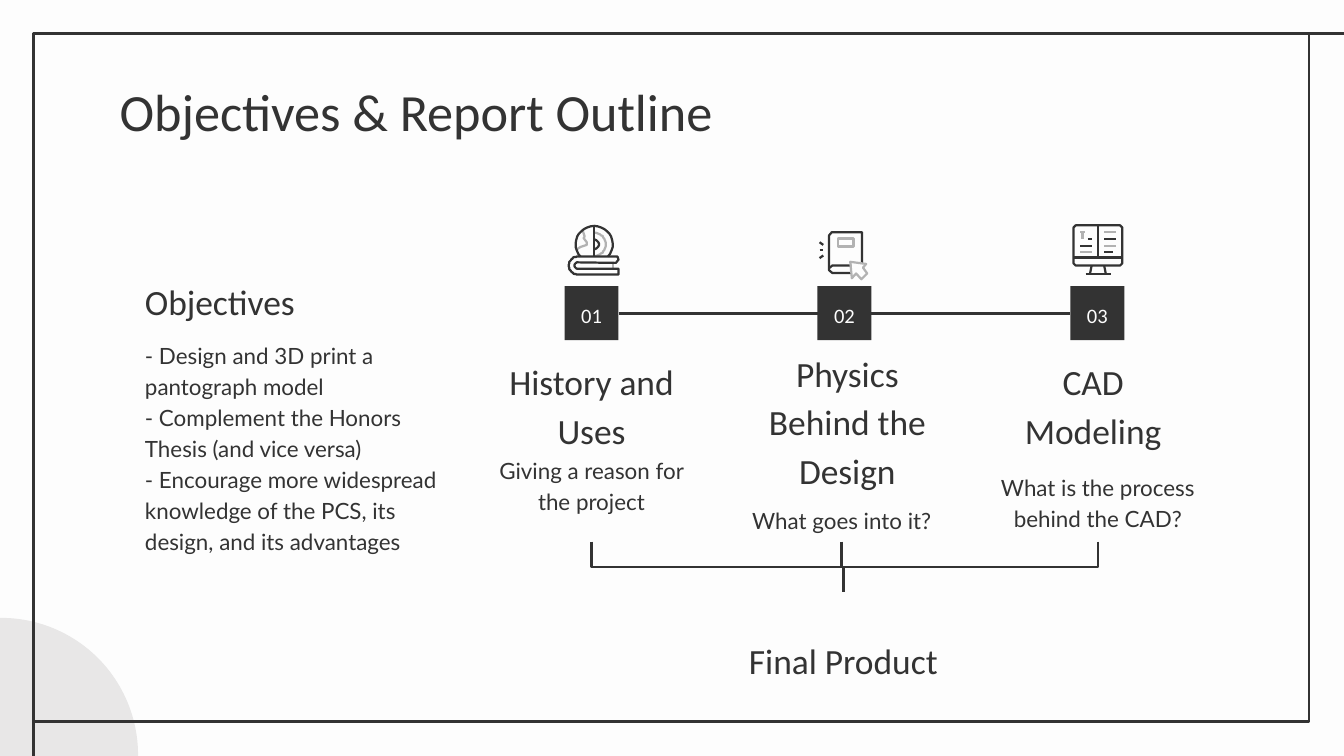
from dataclasses import dataclass
from math import cos, radians, sin

from lxml import etree
from pptx import Presentation
from pptx import util as u
from pptx.dml import color
from pptx.enum import shapes, text
from pptx.oxml import ns


@dataclass(frozen=True)
class Theme:
    """Colours, fonts, type sizes and line widths of the slide."""
    ink: str = "333333"
    paper: str = "FDFDFD"
    grey: str = "B2B2B2"
    pale: str = "E8E7E7"
    head: str = "Calibri"
    body: str = "Lato"
    title_pt: float = 28
    head_pt: float = 19
    body_pt: float = 12
    label_pt: float = 11
    line_pt: float = 1.5
    icon_pt: float = 1.2


T = Theme()
LEFT, CENTER = text.PP_ALIGN.LEFT, text.PP_ALIGN.CENTER
TOP, MIDDLE, BOTTOM = (text.MSO_ANCHOR.TOP, text.MSO_ANCHOR.MIDDLE,
                       text.MSO_ANCHOR.BOTTOM)
HEADING = dict(font=T.head, size=T.head_pt, anchor=BOTTOM)
CAPTION = dict(font=T.body, size=T.body_pt, anchor=TOP)

STEP_LEFT, STEP_TOP, STEP_SIZE, STEP_PITCH = 10.67, 5.41, 1.02, 4.78
STEPS = [
    ("01", "History and Uses", (9.02, 6.86, 4.32, 1.93),
     "Giving a reason for the project", (9.02, 8.31, 4.32, 1.93)),
    ("02", "Physics Behind the Design", (13.79, 6.86, 4.45, 2.69),
     "What goes into it?", (13.79, 9.27, 4.24, 0.97)),
    ("03", "CAD Modeling", (18.59, 6.86, 4.14, 1.93),
     "What is the process behind the CAD?", (18.59, 8.64, 4.32, 1.6)),
]
OBJECTIVES = [
    "- Design and 3D print a pantograph model",
    "- Complement the Honors Thesis (and vice versa)",
    "- Encourage more widespread knowledge of the PCS, its design, "
    "and its advantages",
]


def arc(cx, cy, r, start, end):
    """Return points along an arc, with angles in degrees clockwise from the right."""
    angles = [radians(start + (end - start) * i / 24) for i in range(25)]
    return [(round(cx + r * cos(a)), round(cy + r * sin(a))) for a in angles]


def box(x1, y1, x2, y2):
    """Return the closed outline of a rectangle."""
    return [(x1, y1), (x2, y1), (x2, y2), (x1, y2), (x1, y1)]


def bar(x1, x2, y):
    """Return a horizontal stroke."""
    return [(x1, y), (x2, y)]


GLOBE_ON_BOOK = {
    T.grey: [
        [(34, 11), (38, 23), (36, 26), (42, 34), (42, 39), (30, 43), (22, 48)],
        arc(56, 38, 22, -90, 90), [(92, 73), (92, 83)]],
    T.ink: [
        arc(56, 38, 35, 139, 401), arc(56, 38, 9, -90, 90), [(56, 3), (56, 61)],
        [(100, 61), *arc(25, 78, 17, 270, 90), (102, 95), (102, 84),
         *arc(25, 78, 6, 90, 270), (97, 73), (102, 67), (100, 61)]],
}
CLICKED_BOOK = {
    T.ink: [
        [(62, 79), (26, 79), (20, 74), (20, 8), (25, 2), (82, 2), (82, 60)],
        [(20, 70), (26, 65), (62, 65)],
        bar(2, 9, 36), [(2, 21), (9, 26)], [(2, 51), (9, 46)]],
    T.grey: [
        box(37, 14, 66, 29),
        [(60, 58), (90, 62), (84, 69), (92, 80), (81, 91), (71, 80), (63, 89),
         (60, 58)]],
}
MONITOR = {
    T.ink: [
        [(6, 2), (90, 2), (94, 6), (94, 74), (90, 78), (6, 78), (2, 74), (2, 6),
         (6, 2)],
        [(48, 2), (48, 63)], bar(2, 94, 63), bar(25, 72, 94),
        [(36, 79), (33, 94)], [(60, 79), (63, 94)],
        bar(29, 36, 28), bar(15, 36, 41), bar(60, 82, 28), bar(60, 77, 53)],
    T.grey: [
        bar(15, 24, 15), [(19, 15), (19, 28)], bar(15, 36, 53),
        bar(60, 82, 15), bar(60, 82, 41)],
}


def put(obj, values):
    """Set attributes from a dict."""
    for name, value in values.items():
        setattr(obj, name, value)


def cm(*lengths):
    """Convert numbers to lengths in centimetres."""
    return [u.Cm(n) for n in lengths]


def rgb(code):
    """Return a colour from its hex code."""
    return color.RGBColor.from_string(code)


def style_line(line, ink=T.ink, width=T.line_pt):
    """Give a line its colour and width."""
    line.color.rgb = rgb(ink)
    line.width = u.Pt(width)


def write(sp, lines, font, size, anchor, align=LEFT, ink=T.ink, spacing=1.15):
    """Fill a shape with formatted paragraphs."""
    tf = sp.text_frame
    put(tf, dict(word_wrap=True, auto_size=text.MSO_AUTO_SIZE.NONE,
                 vertical_anchor=anchor))
    put(tf, {f"margin_{side}": u.Cm(0.25)
             for side in ("left", "right", "top", "bottom")})
    for i, line in enumerate(lines):
        p = tf.add_paragraph() if i else tf.paragraphs[0]
        put(p, dict(alignment=align, line_spacing=spacing, space_before=u.Pt(0)))
        r = p.add_run()
        r.text = line
        put(r.font, dict(name=font, size=u.Pt(size)))
        r.font.color.rgb = rgb(ink)


def add_label(s, line, area, **style):
    """Add a text box with one paragraph."""
    write(s.shapes.add_textbox(*cm(*area)), [line], **style)


def fill_placeholder(sp, area, lines, **style):
    """Move a placeholder and write unbulleted text in it."""
    put(sp, dict(zip(("left", "top", "width", "height"), cm(*area))))
    write(sp, lines, **style)
    for p in sp.text_frame.paragraphs:
        pPr = p._p.get_or_add_pPr()
        pPr.set("marL", "0")
        pPr.set("indent", "0")
        etree.SubElement(pPr, ns.qn("a:buNone"))


def add_block(s, kind, area, fill=None, line=None):
    """Add a preset shape with a plain fill or outline."""
    sp = s.shapes.add_shape(kind, *cm(*area))
    sp.shadow.inherit = False
    if fill:
        sp.fill.solid()
        sp.fill.fore_color.rgb = rgb(fill)
    else:
        sp.fill.background()
    if line:
        style_line(sp.line, line)
    else:
        sp.line.fill.background()
    return sp


def add_link(s, x1, y1, x2, y2, kind=shapes.MSO_CONNECTOR.STRAIGHT):
    """Add a connector without shadow."""
    link = s.shapes.add_connector(kind, *cm(x1, y1, x2, y2))
    style_line(link.line)
    etree.SubElement(link._element.spPr, ns.qn("a:effectLst"))
    return link


def add_bracket(s, x1, y1, x2, y2):
    """Add an elbow connector that leaves and arrives vertically."""
    cx, cy = (x1 + x2) / 2, (y1 + y2) / 2
    side = 1 if x2 > x1 else -1
    dx, dy = side * (y2 - y1) / 2, abs(x2 - x1) / 2
    link = add_link(s, cx + dx, cy - dy, cx - dx, cy + dy,
                    shapes.MSO_CONNECTOR.ELBOW)
    link._element.spPr.xfrm.rot = 270 if side > 0 else 90


def add_icon(s, left, top, strokes):
    """Draw an icon from strokes in hundredths of a centimetre."""
    for ink, outlines in strokes.items():
        for points in outlines:
            fb = s.shapes.build_freeform(*points[0], scale=u.Cm(0.01))
            fb.add_line_segments(points[1:], close=points[0] == points[-1])
            sp = fb.convert_to_shape(*cm(left, top))
            sp.shadow.inherit = False
            sp.fill.background()
            style_line(sp.line, ink, T.icon_pt)


def add_frame(s):
    """Draw the corner disc and the page frame with its extensions."""
    add_block(s, shapes.MSO_SHAPE.OVAL, (-2.57, 11.68, 5.18, 5.18), T.pale)
    add_block(s, shapes.MSO_SHAPE.RECTANGLE, (0.64, 0.64, 24.1, 13), line=T.ink)
    add_link(s, 25.4, 0.64, 24.74, 0.64)
    add_link(s, 0.64, 14.29, 0.64, 13.59)


def add_timeline(s):
    """Draw the numbered steps, joined by a line, with their texts."""
    middle = STEP_TOP + STEP_SIZE / 2
    line = add_link(s, STEP_LEFT, middle, STEP_LEFT + 2 * STEP_PITCH, middle)
    squares = []
    for i, (number, heading, head_area, caption, caption_area) in enumerate(STEPS):
        sp = add_block(s, shapes.MSO_SHAPE.RECTANGLE,
                       (STEP_LEFT + i * STEP_PITCH, STEP_TOP, STEP_SIZE, STEP_SIZE),
                       T.ink)
        write(sp, [number], T.head, T.label_pt, MIDDLE, CENTER, T.paper)
        squares.append(sp)
        add_label(s, heading, head_area, align=CENTER, **HEADING)
        add_label(s, caption, caption_area, align=CENTER, **CAPTION)
    line.begin_connect(squares[0], 3)
    line.end_connect(squares[-1], 1)


def main():
    """Build and save the slide."""
    prs = Presentation()
    put(prs, dict(slide_width=u.Cm(25.4), slide_height=u.Cm(14.29)))
    s = prs.slides.add_slide(prs.slide_layouts[1])
    s.background.fill.solid()
    s.background.fill.fore_color.rgb = rgb(T.paper)
    add_frame(s)
    fill_placeholder(s.shapes.title, (2.01, 1.24, 21.41, 1.6),
                     ["Objectives & Report Outline"], font=T.head,
                     size=T.title_pt, anchor=TOP, spacing=1.0)
    add_label(s, "Objectives", (2.49, 5.21, 6.12, 1.14), **HEADING)
    fill_placeholder(s.placeholders[1], (2.49, 6.15, 6.12, 4.47), OBJECTIVES,
                     **CAPTION)
    add_timeline(s)
    add_icon(s, 10.67, 4.24, GLOBE_ON_BOOK)
    add_icon(s, 15.47, 4.37, CLICKED_BOOK)
    add_icon(s, 20.27, 4.24, MONITOR)
    for x in (11.18, 15.9, 20.75):
        add_bracket(s, x, 10.24, 15.94, 11.2)
    add_label(s, "Final Product", (13.82, 11.2, 4.24, 1.93), align=CENTER, **HEADING)
    prs.save("out.pptx")


if __name__ == "__main__":
    main()
